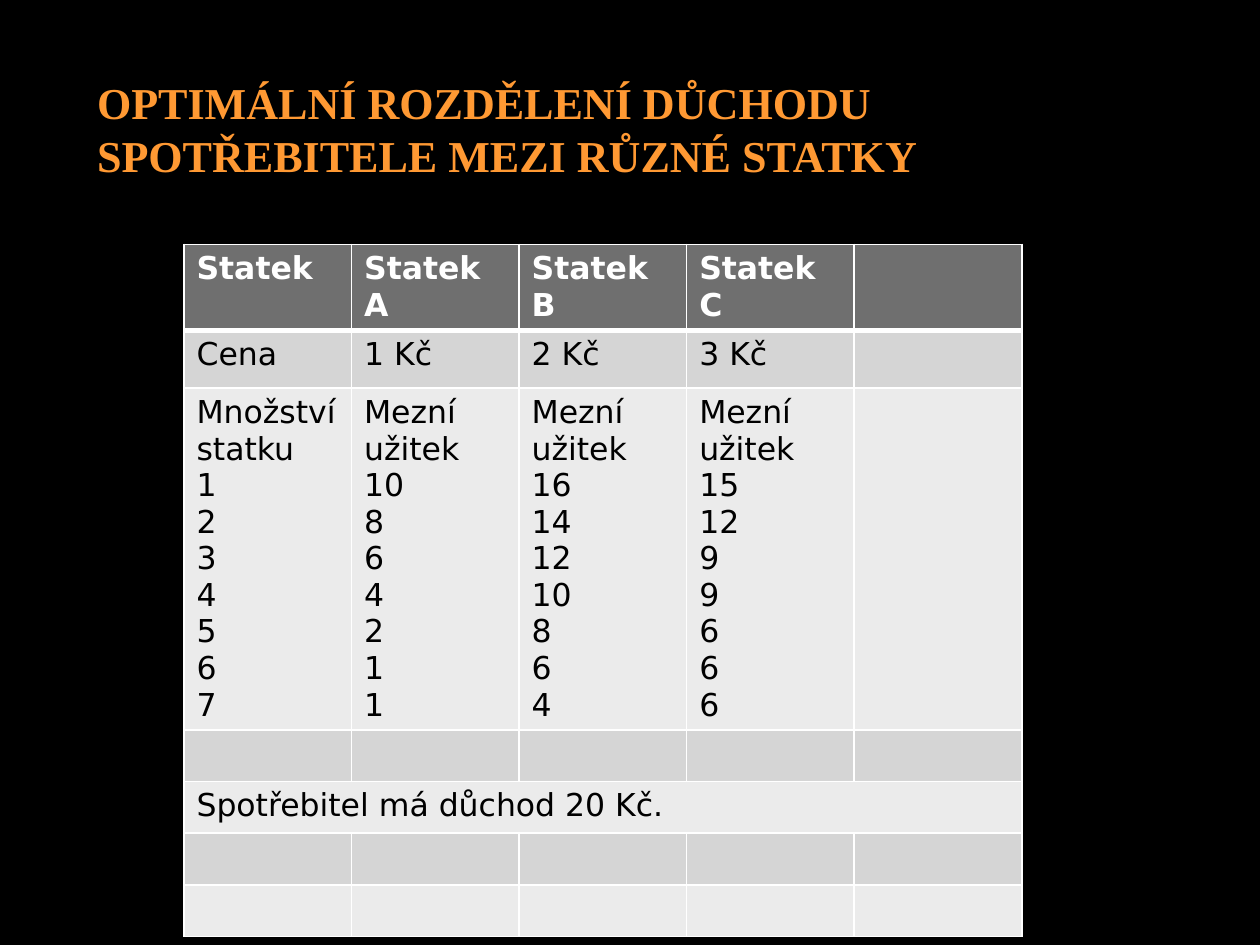
from dataclasses import dataclass

from lxml.etree import SubElement
from pptx import Presentation
from pptx.dml.color import RGBColor
from pptx.enum.text import MSO_ANCHOR, MSO_AUTO_SIZE, PP_ALIGN
from pptx.oxml.ns import qn
from pptx.util import Inches, Pt

BLACK = RGBColor(0x00, 0x00, 0x00)
WHITE = RGBColor(0xFF, 0xFF, 0xFF)
ORANGE = RGBColor(0xFF, 0x99, 0x33)
HEADER_GRAY = RGBColor(0x6F, 0x6F, 0x6F)
DARK_BAND = RGBColor(0xD5, 0xD5, 0xD5)
LIGHT_BAND = RGBColor(0xEB, 0xEB, 0xEB)
COLUMNS = 5
COLUMN_WIDTH = Inches(1.33)


@dataclass
class Row:
    height: float
    texts: tuple[str, ...] = ()
    merged: bool = False


def utility(*values: int) -> str:
    return "\n".join(["Mezní užitek", *map(str, values)])


ROWS = [
    Row(0.67, ("Statek", "Statek A", "Statek B", "Statek C")),
    Row(0.46, ("Cena", "1 Kč", "2 Kč", "3 Kč")),
    Row(2.71, (
        "\n".join(["Množství", "statku", *map(str, range(1, 8))]),
        utility(10, 8, 6, 4, 2, 1, 1),
        utility(16, 14, 12, 10, 8, 6, 4),
        utility(15, 12, 9, 9, 6, 6, 6),
    )),
    Row(0.41),
    Row(0.41, ("Spotřebitel má důchod 20 Kč.",), merged=True),
    Row(0.41),
    Row(0.41),
]


def format_runs(tf, font: str, size: float, color: RGBColor, bold: bool) -> None:
    for p in tf.paragraphs:
        for r in p.runs:
            r.font.name = font
            r.font.size = Pt(size)
            r.font.bold = bold
            r.font.color.rgb = color


def add_borders(cell, top: float, bottom: float) -> None:
    tc_pr = cell._tc.get_or_add_tcPr()
    widths = {"a:lnL": 1, "a:lnR": 1, "a:lnT": top, "a:lnB": bottom}
    for position, (tag, width) in enumerate(widths.items()):
        ln = SubElement(tc_pr, qn(tag), w=str(Pt(width)))
        fill = SubElement(ln, qn("a:solidFill"))
        SubElement(fill, qn("a:srgbClr"), val=str(WHITE))
        tc_pr.insert(position, ln)


def add_title(s, text: str) -> None:
    title = s.shapes.title
    title.left, title.top = Inches(0.67), Inches(0.67)
    title.width, title.height = Inches(7.75), Inches(0.7)
    tf = title.text_frame
    tf.text = text
    tf.word_wrap = True
    tf.auto_size = MSO_AUTO_SIZE.NONE
    tf.vertical_anchor = MSO_ANCHOR.MIDDLE
    tf.paragraphs[0].alignment = PP_ALIGN.LEFT
    format_runs(tf, "Times New Roman", 25.2, ORANGE, True)


def add_utility_table(s, rows: list[Row]) -> None:
    height = Inches(sum(row.height for row in rows))
    table = s.shapes.add_table(
        len(rows), COLUMNS, Inches(1.46), Inches(1.94),
        COLUMN_WIDTH * COLUMNS, height).table
    for column in table.columns:
        column.width = COLUMN_WIDTH
    for i, row in enumerate(rows):
        table.rows[i].height = Inches(row.height)
        header = i == 0
        band = HEADER_GRAY if header else DARK_BAND if i % 2 else LIGHT_BAND
        for j in range(COLUMNS):
            cell = table.cell(i, j)
            cell.fill.solid()
            cell.fill.fore_color.rgb = band
            add_borders(cell, 3 if i == 1 else 1, 3 if header else 1)
            if j < len(row.texts):
                cell.text_frame.text = row.texts[j]
                format_runs(cell.text_frame, "DejaVu Sans", 18,
                            WHITE if header else BLACK, header)
        if row.merged:
            table.cell(i, 0).merge(table.cell(i, COLUMNS - 1))


def main() -> None:
    prs = Presentation()
    prs.slide_width, prs.slide_height = Inches(10), Inches(7.5)
    s = prs.slides.add_slide(prs.slide_layouts[5])
    s.background.fill.solid()
    s.background.fill.fore_color.rgb = BLACK
    add_title(s, "OPTIMÁLNÍ ROZDĚLENÍ DŮCHODU SPOTŘEBITELE MEZI RŮZNÉ STATKY")
    add_utility_table(s, ROWS)
    prs.save("out.pptx")


if __name__ == "__main__":
    main()
